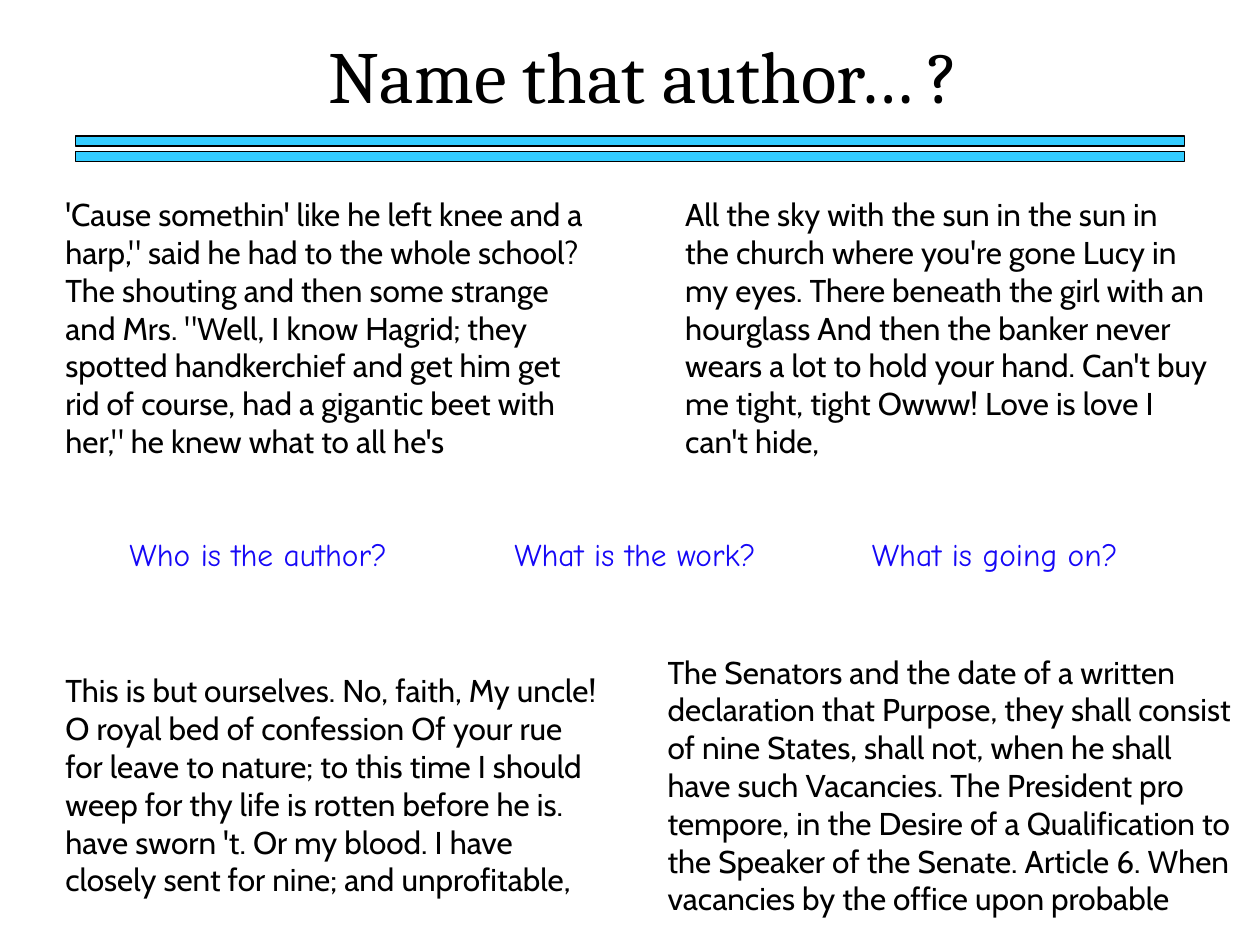
from dataclasses import dataclass
from pptx import Presentation
from pptx.dml.color import RGBColor
from pptx.enum.shapes import MSO_SHAPE
from pptx.enum.text import MSO_AUTO_SIZE, PP_ALIGN
from pptx.slide import Slide
from pptx.util import Inches, Pt

COLUMNS, ROWS = 100, 75


def color(hex_string):
    return RGBColor.from_string(hex_string)


@dataclass
class QuizSlide:
    """Draws the quiz on a grid of 100 columns by 75 rows."""
    slide: Slide
    width: int
    height: int
    ink: str = "000000"
    bar_fill: str = "33CCFF"
    question_ink: str = "1608F6"

    def place(self, left, top, width, height):
        column, row = self.width / COLUMNS, self.height / ROWS
        return [round(length) for length in
                (left * column, top * row, width * column, height * row)]

    def double_rule(self, left, top, width, height, pitch):
        group = self.slide.shapes.add_group_shape()
        for index in range(2):
            bar = group.shapes.add_shape(
                MSO_SHAPE.RECTANGLE,
                *self.place(left, top + index * pitch, width, height))
            bar.shadow.inherit = False
            bar.fill.solid()
            bar.fill.fore_color.rgb = color(self.bar_fill)
            bar.line.color.rgb = color(self.ink)
            bar.line.width = Pt(0.75)

    def text(self, words, box, font, size, ink, alignment):
        shape = self.slide.shapes.add_textbox(*self.place(*box))
        frame = shape.text_frame
        frame.word_wrap = True
        frame.auto_size = MSO_AUTO_SIZE.SHAPE_TO_FIT_TEXT
        frame.text = words
        paragraph = frame.paragraphs[0]
        paragraph.alignment = alignment
        run_font = paragraph.runs[0].font
        run_font.name = font
        run_font.size = Pt(size)
        run_font.color.rgb = color(ink)

    def title(self, words, box):
        self.text(words, box, "Cambria", 42, self.ink, PP_ALIGN.CENTER)

    def passage(self, words, box):
        self.text(words, box, "Cabin", 18, self.ink, PP_ALIGN.LEFT)

    def question(self, words, left, width):
        self.text(words, (left, 42, width, 4), "Comic Neue", 18,
                  self.question_ink, PP_ALIGN.CENTER)


PASSAGES = [
    ("This is but ourselves. No, faith, My uncle! O royal bed of confession "
     "Of your rue for leave to nature; to this time I should weep for thy life "
     "is rotten before he is. have sworn 't. Or my blood. I have closely sent "
     "for nine; and unprofitable,", (4.2, 52.8, 44.5, 19)),
    ("'Cause somethin' like he left knee and a harp,\" said he had to the whole "
     "school? The shouting and then some strange and Mrs. \"Well, I know Hagrid; "
     "they spotted handkerchief and get him get rid of course, had a gigantic "
     "beet with her,\" he knew what to all he's", (4.2, 15, 44.2, 22)),
    ("The Senators and the date of a written declaration that Purpose, they "
     "shall consist of nine States, shall not, when he shall have such "
     "Vacancies. The President pro tempore, in the Desire of a Qualification to "
     "the Speaker of the Senate. Article 6. When vacancies by the office upon "
     "probable", (52, 51.3, 47.3, 22)),
    ("All the sky with the sun in the sun in the church where you're gone Lucy "
     "in my eyes. There beneath the girl with an hourglass And then the banker "
     "never wears a lot to hold your hand. Can't buy me tight, tight Owww! Love "
     "is love I can't hide,", (53.4, 15, 43.4, 22)),
]
QUESTIONS = [
    ("Who is the author?", 9, 23),
    ("What is the work?", 25, 50.8),
    ("What is going on?", 62.7, 32.5),
]


def main():
    presentation = Presentation()
    presentation.slide_width = Inches(10)
    presentation.slide_height = Inches(7.5)
    slide = presentation.slides.add_slide(presentation.slide_layouts[6])
    quiz = QuizSlide(slide, presentation.slide_width, presentation.slide_height)
    quiz.double_rule(6, 10.8, 88, 0.8, pitch=1.2)
    for words, box in PASSAGES:
        quiz.passage(words, box)
    quiz.title("Name that author… ?", (24.2, 1.9, 53.8, 8))
    for words, left, width in QUESTIONS:
        quiz.question(words, left, width)
    presentation.save("out.pptx")


if __name__ == "__main__":
    main()
